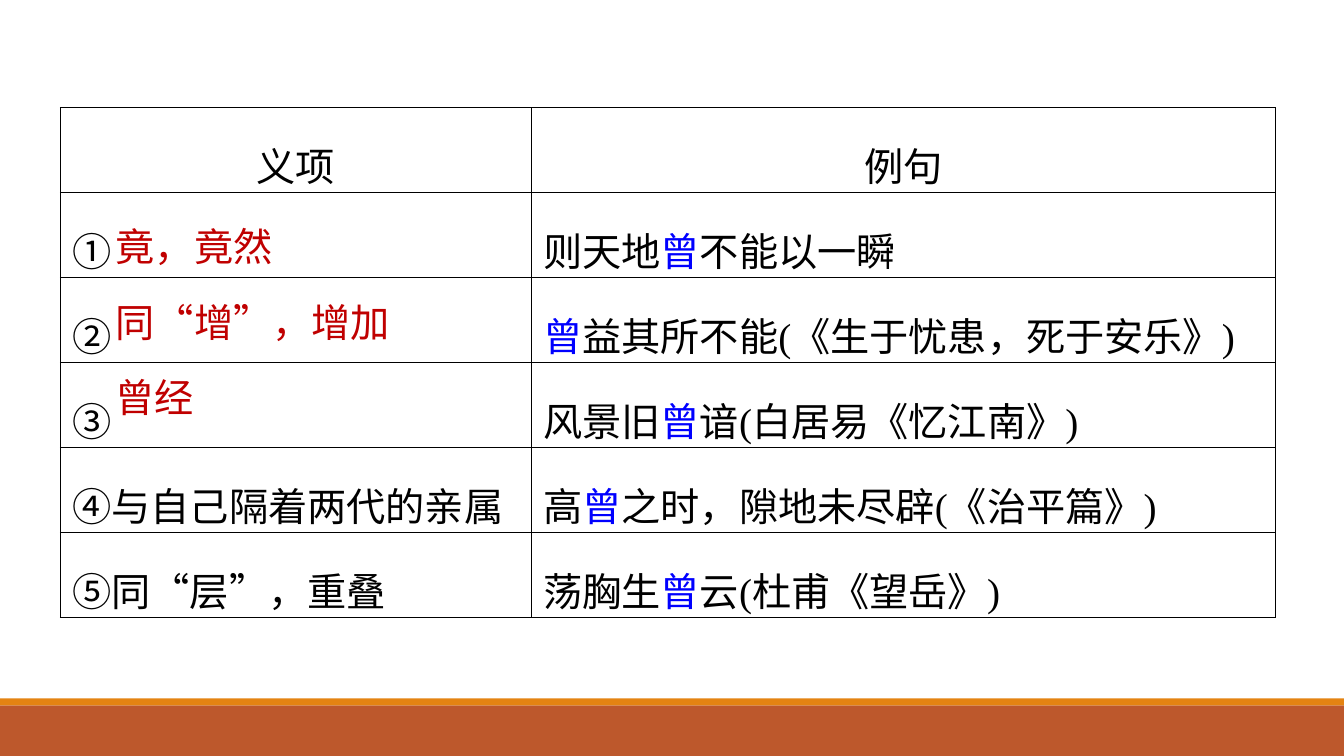
import itertools
from dataclasses import dataclass

import pptx
import pptx.dml.color
import pptx.enum.shapes
import pptx.enum.text
import pptx.oxml
import pptx.oxml.ns
import pptx.util
from lxml import etree

ALIGN = pptx.enum.text.PP_ALIGN
SYMBOLS = "①②③④⑤“”"
KEYWORD = "曾"
ROWS = [
    ("义项", "例句"),
    ("①", "则天地曾不能以一瞬"),
    ("②", "曾益其所不能(《生于忧患，死于安乐》)"),
    ("③", "风景旧曾谙(白居易《忆江南》)"),
    ("④与自己隔着两代的亲属", "高曾之时，隙地未尽辟(《治平篇》)"),
    ("⑤同“层”，重叠", "荡胸生曾云(杜甫《望岳》)"),
]
ANSWERS = ["竟，竟然", "同“增”，增加", "曾经"]


@dataclass(frozen=True)
class Theme:
    """Colours, fonts and type size of the slide."""
    text: str = "000000"
    keyword: str = "0000FF"
    answer: str = "C00000"
    band: str = "BD582C"
    stripe: str = "E48312"
    latin: str = "Times New Roman"
    cjk: str = "Noto Sans CJK SC"
    size: int = 28
    border: int = 1


THEME = Theme()


def rgb(value):
    """Return a colour object for a hex string."""
    return pptx.dml.color.RGBColor.from_string(value)


def write(p, text, color, keyword_color):
    """Fill a paragraph, with runs split at symbols and at the keyword."""
    groups = itertools.groupby(text, lambda ch: (ch in SYMBOLS, ch == KEYWORD))
    for (is_symbol, is_keyword), chars in groups:
        r = p.add_run()
        r.text = "".join(chars)
        r.font.size = pptx.util.Pt(THEME.size)
        r.font.color.rgb = rgb(keyword_color if is_keyword else color)
        r.font.name = THEME.cjk if is_symbol else THEME.latin
        ea = etree.SubElement(r.font._element, pptx.oxml.ns.qn("a:ea"))
        ea.set("typeface", THEME.cjk)


def add_borders(cell):
    """Draw a thin line on all four sides of a cell."""
    tc_pr = cell._tc.get_or_add_tcPr()
    for side in "LRTB":
        tc_pr.append(pptx.oxml.parse_xml(
            f'<a:ln{side} {pptx.oxml.ns.nsdecls("a")} w="{pptx.util.Pt(THEME.border)}">'
            f'<a:solidFill><a:srgbClr val="{THEME.text}"/></a:solidFill></a:ln{side}>'))


def add_meanings_table(slide, x, y, w, h):
    """Place the table of meanings and example sentences in the given box."""
    table = slide.shapes.add_table(len(ROWS), 2, x, y, w, h).table
    table.first_row = table.horz_banding = False
    table.columns[0].width = int(w * 0.3875)
    table.columns[1].width = w - table.columns[0].width
    for i, row in enumerate(ROWS):
        for j, text in enumerate(row):
            cell = table.cell(i, j)
            cell.margin_left = cell.margin_right = pptx.util.Inches(0.04)
            cell.margin_top = cell.margin_bottom = 0
            cell.vertical_anchor = pptx.enum.text.MSO_ANCHOR.MIDDLE
            add_borders(cell)
            cell.fill.background()
            p = cell.text_frame.paragraphs[0]
            p.line_spacing = 1.5
            if i == 0:
                p.alignment = ALIGN.CENTER
            else:
                p._p.get_or_add_pPr().set("marL", str(pptx.util.Inches(0.08)))
            write(p, text, THEME.text, THEME.keyword)


def add_answers(slide, x, y, w, h):
    """Place the answers, one a line, in the given box."""
    tf = slide.shapes.add_textbox(x, y, w, h).text_frame
    tf.word_wrap = True
    tf.auto_size = pptx.enum.text.MSO_AUTO_SIZE.SHAPE_TO_FIT_TEXT
    for i, text in enumerate(ANSWERS):
        p = tf.add_paragraph() if i else tf.paragraphs[0]
        p.alignment = ALIGN.JUSTIFY
        p.line_spacing = 1.6
        write(p, text, THEME.answer, THEME.answer)


def add_footer(slide, x, y, w, h):
    """Place a thin stripe over a band in the given box."""
    stripe_h = int(h * 0.12)
    bars = [(y + stripe_h, h - stripe_h, THEME.band), (y, stripe_h, THEME.stripe)]
    for top, height, color in bars:
        sp = slide.shapes.add_shape(
            pptx.enum.shapes.MSO_SHAPE.RECTANGLE, x, top, w, height)
        sp.shadow.inherit = False
        sp.fill.solid()
        sp.fill.fore_color.rgb = rgb(color)
        sp.line.fill.background()


def main():
    """Build the slide and save it."""
    prs = pptx.Presentation()
    prs.slide_width = pptx.util.Inches(13.33)
    prs.slide_height = pptx.util.Inches(7.5)
    slide = prs.slides.add_slide(prs.slide_layouts[6])

    def box(*inches):
        return [pptx.util.Inches(v) for v in inches]

    add_footer(slide, *box(0, 6.93, 13.33, 0.57))
    add_meanings_table(slide, *box(0.6, 1.07, 12.05, 4.82))
    add_answers(slide, *box(1.05, 1.88, 6.66, 2.28))
    prs.save("out.pptx")


if __name__ == "__main__":
    main()
